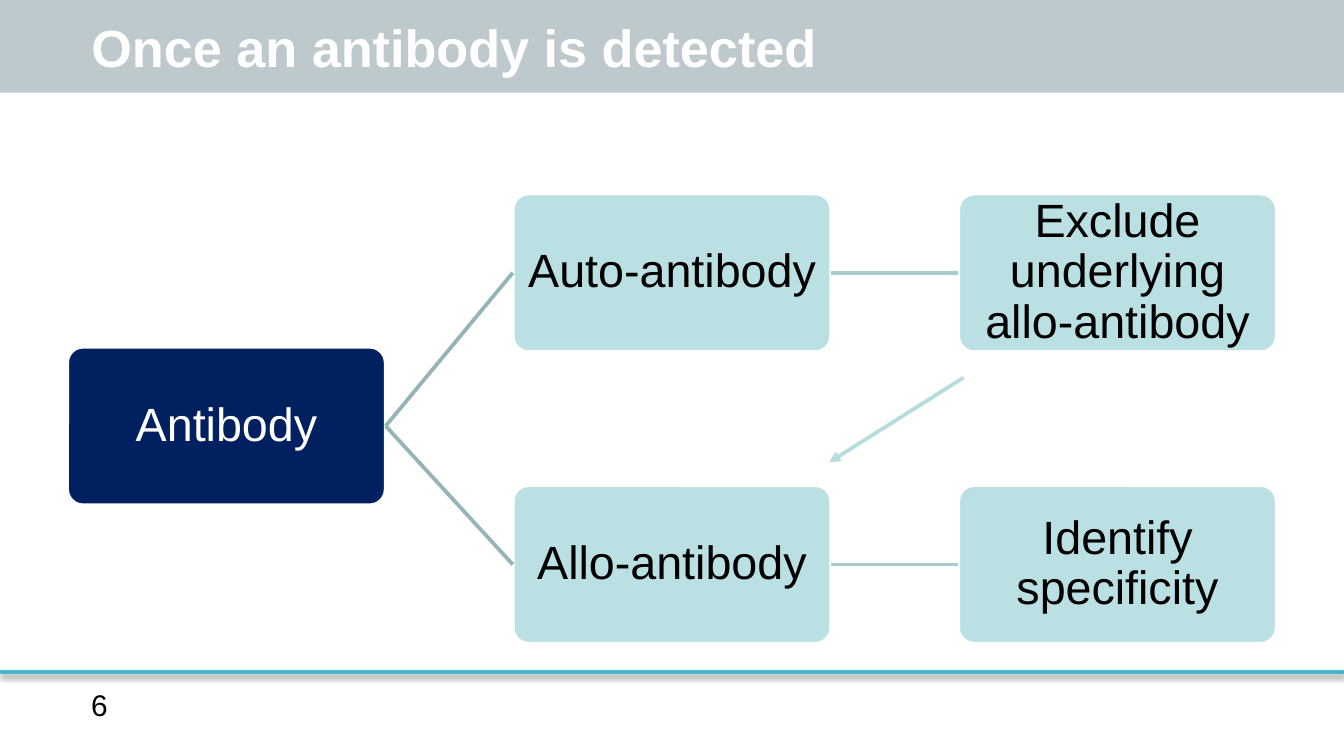
import pptx
import pptx.dml.color
import pptx.enum.shapes
import pptx.enum.text
import pptx.oxml
import pptx.oxml.ns
import pptx.util

Inches = pptx.util.Inches
Pt = pptx.util.Pt
Shape = pptx.enum.shapes.MSO_SHAPE
Align = pptx.enum.text.PP_ALIGN
Anchor = pptx.enum.text.MSO_ANCHOR

COLORS = {
    "white": "FFFFFF", "black": "000000", "band": "466673", "rule": "46B9C6",
    "navy": "002060", "pale": "BBE0E3", "fork": "96B3B6", "link": "AACBCE",
    "arrow": "B6DCDF",
}
WIDTH, EDGE = 10, 0.5
BOX_W, BOX_H = 2.37, 1.18
STEP = (WIDTH - 2 * EDGE - BOX_W) / 2
COLS = [EDGE + i * STEP for i in range(3)]
TOP, MID, LOW = 1.44, 2.58, 3.61
RIGHT, LEFT = 3, 1


def color(name):
    return pptx.dml.color.RGBColor.from_string(COLORS[name])


def add_xml(parent, tag, body="", attrs=""):
    ns = pptx.oxml.ns.nsdecls("a")
    node = pptx.oxml.parse_xml(f"<a:{tag} {ns} {attrs}>{body}</a:{tag}>")
    parent.append(node)


def style(par, size, ink, bold=False, align=Align.LEFT):
    par.alignment = align
    font = par.font
    font.name, font.size, font.bold = "Arial", Pt(size), bold
    font.color.rgb = color(ink)


def add_band(slide):
    band = slide.shapes.add_shape(Shape.RECTANGLE, 0, 0, Inches(WIDTH), Inches(0.69))
    band.shadow.inherit = False
    band.fill.solid()
    band.fill.fore_color.rgb = color("band")
    add_xml(band.fill.fore_color._xFill.srgbClr, "alpha", attrs='val="35000"')
    band.line.fill.background()
    # The title placeholder comes first in the tree; keep the band behind it.
    slide.shapes._spTree.insert(2, band._element)


def set_title(slide, text):
    title = slide.shapes.title
    title.left, title.top = Inches(0.58), Inches(0.12)
    title.width, title.height = Inches(8.17), Inches(0.46)
    frame = title.text_frame
    frame.text = text
    frame.auto_size = pptx.enum.text.MSO_AUTO_SIZE.NONE
    frame.vertical_anchor = Anchor.MIDDLE
    style(frame.paragraphs[0], 28, "white", bold=True)


def add_number(slide, text):
    box = slide.shapes.add_textbox(Inches(0.58), Inches(5.06), Inches(1.92), Inches(0.37))
    box.text_frame.word_wrap = True
    box.text_frame.text = text
    style(box.text_frame.paragraphs[0], 16, "black")


def add_line(slide, start, end, ink, effect="", head=False):
    points = [Inches(v) for v in (*start, *end)]
    line = slide.shapes.add_connector(pptx.enum.shapes.MSO_CONNECTOR.STRAIGHT, *points)
    line.line.color.rgb = color(ink)
    line.line.width = Pt(2)
    if head:
        add_xml(line.line._ln, "tailEnd", attrs='type="triangle"')
    add_xml(line._element.spPr, "effectLst", effect)
    return line


def add_rule(slide):
    shadow = ('<a:outerShdw blurRad="40000" dist="20000" dir="5400000" rotWithShape="0">'
              '<a:srgbClr val="000000"><a:alpha val="38000"/></a:srgbClr></a:outerShdw>')
    add_line(slide, (0, 5), (WIDTH, 5), "rule", shadow)


def add_box(slide, text, left, top, fill="pale", ink="black"):
    box = slide.shapes.add_shape(
        Shape.ROUNDED_RECTANGLE, Inches(left), Inches(top), Inches(BOX_W), Inches(BOX_H))
    box.adjustments[0] = 0.1
    box.shadow.inherit = False
    box.fill.solid()
    box.fill.fore_color.rgb = color(fill)
    box.line.color.rgb = color("white")
    box.line.width = Pt(2)
    frame = box.text_frame
    frame.word_wrap = True
    frame.vertical_anchor = Anchor.MIDDLE
    frame.margin_left = frame.margin_right = Inches(0.02)
    frame.margin_top = frame.margin_bottom = Inches(0.02)
    frame.text = text
    par = frame.paragraphs[0]
    par.line_spacing = 0.9
    style(par, 25, ink, align=Align.CENTER)
    return box


def join(slide, first, second, ink):
    """Link the right side of one box to the left side of another."""
    line = add_line(slide, (0, 0), (1, 1), ink)
    line.begin_connect(first, RIGHT)
    line.end_connect(second, LEFT)


def main():
    deck = pptx.Presentation()
    deck.slide_width, deck.slide_height = Inches(WIDTH), Inches(WIDTH * 9 / 16)
    slide = deck.slides.add_slide(deck.slide_layouts[5])
    add_band(slide)
    set_title(slide, "Once an antibody is detected")
    add_rule(slide)
    add_number(slide, "6")

    root = add_box(slide, "Antibody", COLS[0], MID, "navy", "white")
    rows = [
        (TOP, "Auto-antibody", "Exclude underlying allo-antibody"),
        (LOW, "Allo-antibody", "Identify specificity"),
    ]
    for top, kind, step in rows:
        branch = add_box(slide, kind, COLS[1], top)
        leaf = add_box(slide, step, COLS[2], top)
        join(slide, root, branch, "fork")
        join(slide, branch, leaf, "link")
    add_line(slide, (7.17, 2.81), (6.17, 3.44), "arrow", head=True)
    deck.save("out.pptx")


if __name__ == "__main__":
    main()
